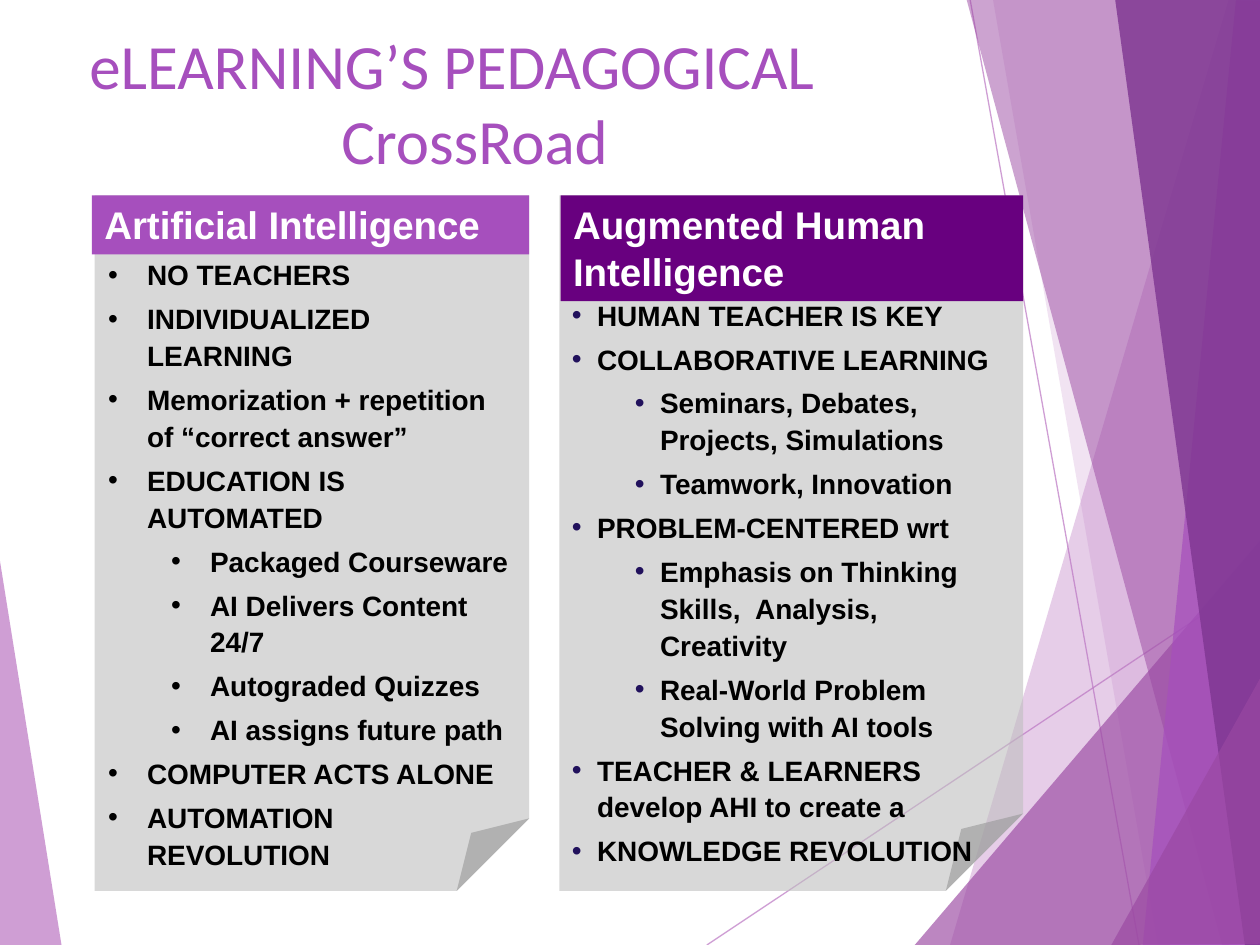
"""Build a slide that contrasts two paths for eLearning."""
from lxml.etree import SubElement
from pptx import Presentation
from pptx.dml.color import RGBColor
from pptx.enum.shapes import MSO_CONNECTOR as Conn, MSO_SHAPE as Kind
from pptx.enum.text import MSO_ANCHOR as Anchor, PP_ALIGN as Align
from pptx.oxml.ns import qn
from pptx.util import Inches, Pt

PURPLE, DARK, PALE, PLUM = "A64FBD", "68007F", "BB76C2", "9A48A2"

LEAVES = [
    (PALE, 70, [(-0.01, 4.39), (0.49, 7.51), (-0.01, 7.5)]),
    (PALE, 36, [(9.75, 0), (7.54, 7.5), (10.02, 7.51), (10.01, 0.01)]),
    (PALE, 20, [(7.88, -0.01), (9.19, 7.5), (10.01, 7.5), (10.01, -0.01)]),
    (PLUM, 66, [(7.26, 7.5), (10, 4.29), (10.01, 7.5)]),
    (PLUM, 50, [(7.67, -0.01), (9.7, 7.5), (10.01, 7.49), (10.01, -0.01)]),
    (PURPLE, 70, [(9.81, -0.01), (9.07, 7.5), (10.01, 7.5), (10, -0.01)]),
    ("7F3792", 82, [(8.85, -0.01), (9.88, 7.5), (10.02, 7.5), (10, -0.01)]),
    (PLUM, 66, [(8.82, 7.5), (10.02, 5.35), (10.02, 7.49)]),
]
RAYS = [(5.61, 7.5, 10.01, 4.57), (7.7, 0, 9.04, 7.5)]

TITLE = [(0, "eLEARNING’S PEDAGOGICAL"), (2, "CrossRoad")]
CARDS = [
    dict(
        head="Artificial Intelligence", color=PURPLE, dot="000000", hang=0.31,
        page=(0.75, 1.55, 3.45, 5.52), bar=(0.73, 1.55, 3.47, 0.47),
        body=(0.76, 2.02, 3.44, 4.9),
        items=[
            (0, "NO TEACHERS"),
            (0, "INDIVIDUALIZED LEARNING"),
            (0, "Memorization + repetition of “correct answer”"),
            (0, "EDUCATION IS AUTOMATED"),
            (1, "Packaged Courseware"),
            (1, "AI Delivers Content 24/7"),
            (1, "Autograded Quizzes"),
            (1, "AI assigns future path"),
            (0, "COMPUTER ACTS ALONE"),
            (0, "AUTOMATION REVOLUTION"),
        ],
    ),
    dict(
        head="Augmented Human Intelligence", color=DARK, dot="21115C", hang=0.2,
        page=(4.44, 1.55, 3.68, 5.52), bar=(4.45, 1.55, 3.67, 0.84),
        body=(4.44, 2.34, 3.68, 4.6),
        items=[
            (0, "HUMAN TEACHER IS KEY"),
            (0, "COLLABORATIVE LEARNING"),
            (1, "Seminars, Debates, Projects, Simulations"),
            (1, "Teamwork, Innovation"),
            (0, "PROBLEM-CENTERED wrt"),
            (1, "Emphasis on Thinking Skills,  Analysis, Creativity"),
            (1, "Real-World Problem Solving with AI tools"),
            (0, "TEACHER & LEARNERS develop AHI to create a"),
            (0, "KNOWLEDGE REVOLUTION"),
        ],
    ),
]


def rgb(code):
    """Turn a hex string into a colour."""
    return RGBColor.from_string(code)


def fade(node, pct):
    """Set the opacity of the solid colour under a node."""
    tint = next(node.iter(qn("a:srgbClr")))
    SubElement(tint, qn("a:alpha"), val=str(pct * 1000))


def paint(shape, color, pct=100):
    """Give a shape a flat fill with no line or shadow."""
    shape.shadow.inherit = False
    shape.fill.solid()
    shape.fill.fore_color.rgb = rgb(color)
    shape.line.fill.background()
    if pct < 100:
        fade(shape._element.spPr, pct)
    return shape


def write(shape, rows, size=16, font="Arial", color="000000", bold=True,
          inset=(0.1, 0, 0.1, 0), step=0.5, hang=0, dot=None, lead=None, gap=0):
    """Fill a shape with rows of (level, text)."""
    frame = shape.text_frame
    frame.word_wrap = True
    frame.vertical_anchor = Anchor.TOP
    (frame.margin_left, frame.margin_top,
     frame.margin_right, frame.margin_bottom) = map(Inches, inset)
    for n, (level, text) in enumerate(rows):
        para = frame.add_paragraph() if n else frame.paragraphs[0]
        para.alignment = Align.LEFT
        para.level = level
        para.space_before = Pt(gap)
        if lead:
            para.line_spacing = lead
        run = para.add_run()
        run.text = text
        run.font.size, run.font.name, run.font.bold = Pt(size), font, bold
        run.font.color.rgb = rgb(color)
        props = para._p.get_or_add_pPr()
        props.set("marL", str(Inches(hang + level * step)))
        props.set("indent", str(-Inches(hang)))
        if dot:
            tint = SubElement(props, qn("a:buClr"))
            SubElement(tint, qn("a:srgbClr"), val=dot)
            SubElement(props, qn("a:buFont"), typeface="Arial")
            SubElement(props, qn("a:buChar"), char="•")


def leaf(shapes, color, pct, spots):
    """Draw one translucent polygon."""
    start, *rest = [(Inches(x), Inches(y)) for x, y in spots]
    path = shapes.build_freeform(*start)
    path.add_line_segments(rest, close=True)
    paint(path.convert_to_shape(), color, pct)


def ray(shapes, ends):
    """Draw one thin translucent line."""
    line = shapes.add_connector(Conn.STRAIGHT, *map(Inches, ends))
    line.line.color.rgb = rgb(PALE)
    line.line.width = Pt(0.75)
    props = line._element.spPr
    fade(props, 70)
    SubElement(props, qn("a:effectLst"))


def card(shapes, head, color, dot, hang, page, bar, body, items):
    """Draw a folded page with its heading bar and list."""
    paint(shapes.add_shape(Kind.FOLDED_CORNER, *map(Inches, page)), "BFBFBF", 60)
    top = paint(shapes.add_shape(Kind.RECTANGLE, *map(Inches, bar)), color)
    write(top, [(0, head)], size=22, color="FFFFFF", inset=(0.1, 0.05, 0.1, 0.05))
    write(shapes.add_textbox(*map(Inches, body)), items,
          hang=hang, dot=dot, lead=1.1, gap=4)


def main():
    """Build and save the slide."""
    deck = Presentation()
    deck.slide_width, deck.slide_height = Inches(10), Inches(7.5)
    shapes = deck.slides.add_slide(deck.slide_layouts[6]).shapes
    leaf(shapes, *LEAVES[0])
    for ends in RAYS:
        ray(shapes, ends)
    for item in LEAVES[1:]:
        leaf(shapes, *item)
    for item in CARDS:
        card(shapes, **item)
    box = shapes.add_textbox(*map(Inches, (0.71, 0.16, 8.53, 1.3)))
    write(box, TITLE, size=36, font="Calibri", color=PURPLE, bold=False,
          inset=(0, 0.05, 0.1, 0), step=1)
    deck.save("out.pptx")


if __name__ == "__main__":
    main()
